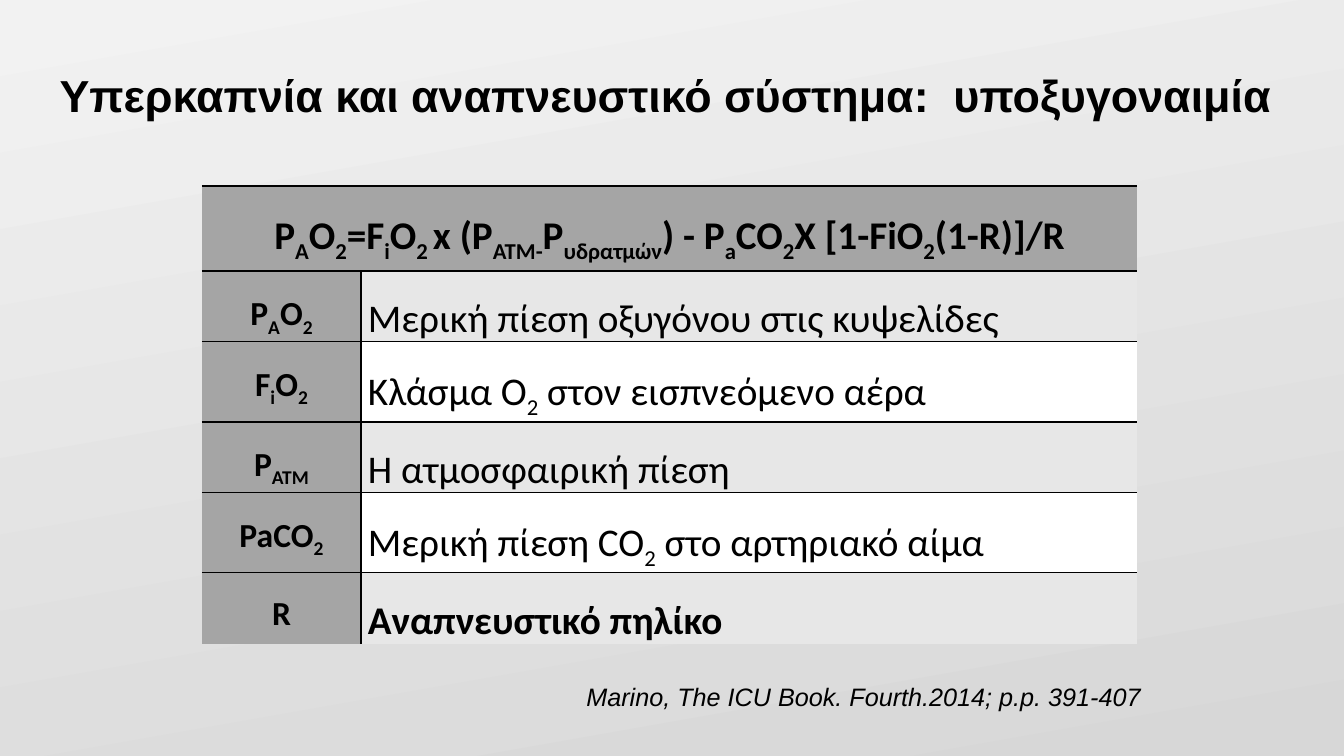
import pptx
import pptx.dml.color
import pptx.enum.text
import pptx.oxml
import pptx.oxml.ns
import pptx.util

ALIGN = pptx.enum.text.PP_ALIGN
ANCHOR = pptx.enum.text.MSO_ANCHOR

# Text inside braces is set as subscript.
TITLE = "Υπερκαπνία και αναπνευστικό σύστημα:  υποξυγοναιμία"
EQUATION = "P{A}O{2}=F{i}O{2 }x (P{ATM-}P{υδρατμών}) - P{a}CO{2}X [1-FiO{2}(1-R)]/R"
TERMS = [
    ("P{A}O{2}", "Μερική πίεση οξυγόνου στις κυψελίδες"),
    ("F{i}O{2}", "Κλάσμα Ο{2} στον εισπνεόμενο αέρα"),
    ("P{ATM}", "Η ατμοσφαιρική πίεση"),
    ("PaCO{2}", "Μερική πίεση CO{2} στο αρτηριακό αίμα"),
    ("R", "Αναπνευστικό πηλίκο"),
]
SOURCE = "Marino, The ICU Book. Fourth.2014; p.p. 391-407"

BLACK, GREY = "000000", "A5A5A5"
BANDS = ["E7E7E7", "FFFFFF"]
BACKDROP = ["F2F2F2", "D7D7D7"]
TABLE_LEFT, TABLE_TOP = 202, 186
COLUMNS = [159, 776]
HEADER_HEIGHT, ROW_HEIGHT = 85, 69
CELL_INSET = 7


def px(length):
    return pptx.util.Emu(round(length * 914400 / 100.8))


def color(value):
    return pptx.dml.color.RGBColor.from_string(value)


def write(frame, text, size, font="Calibri", bold=False, italic=False,
          align=ALIGN.CENTER, spacing=None):
    para = frame.paragraphs[0]
    para.alignment = align
    if spacing:
        para.line_spacing = spacing
    for index, part in enumerate(text.replace("}", "{").split("{")):
        if not part:
            continue
        span = para.add_run()
        span.text = part
        span.font.size = pptx.util.Pt(size)
        span.font.name = font
        span.font.bold = bold
        span.font.italic = italic
        span.font.color.rgb = color(BLACK)
        if index % 2:
            span.font._element.set("baseline", "-25000")


def add_text(page, text, left, top, width, height, anchor=ANCHOR.TOP, **format):
    box = page.shapes.add_textbox(px(left), px(top), px(width), px(height))
    box.text_frame.word_wrap = True
    box.text_frame.vertical_anchor = anchor
    write(box.text_frame, text, font="Arial", **format)


def set_borders(cell, **widths):
    """Draw the sides named L, R, T, B in points and clear the others."""
    properties = cell._tc.get_or_add_tcPr()
    for index, side in enumerate("LRTB"):
        width = widths.get(side, 0)
        paint = (f'<a:solidFill><a:srgbClr val="{BLACK}"/></a:solidFill>'
                 if width else "<a:noFill/>")
        line = pptx.oxml.parse_xml(
            f'<a:ln{side} {pptx.oxml.ns.nsdecls("a")} w="{width * 12700}">'
            f"{paint}</a:ln{side}>")
        properties.insert(index, line)


def fill_cell(cell, text, fill, borders, **format):
    cell.margin_left = cell.margin_right = px(CELL_INSET)
    cell.margin_top = cell.margin_bottom = 0
    cell.fill.solid()
    cell.fill.fore_color.rgb = color(fill)
    set_borders(cell, **borders)
    write(cell.text_frame, text, spacing=1.5, **format)


def add_terms_table(page):
    height = HEADER_HEIGHT + ROW_HEIGHT * len(TERMS)
    table = page.shapes.add_table(
        len(TERMS) + 1, len(COLUMNS), px(TABLE_LEFT), px(TABLE_TOP),
        px(sum(COLUMNS)), px(height)).table
    table.first_row = table.horz_banding = False
    for column, width in zip(table.columns, COLUMNS):
        column.width = px(width)
    for index, row in enumerate(table.rows):
        row.height = px(ROW_HEIGHT if index else HEADER_HEIGHT)

    table.cell(0, 0).merge(table.cell(0, 1))
    header_borders = {"T": 2, "B": 1}
    fill_cell(table.cell(0, 0), EQUATION, GREY, header_borders, size=28, bold=True)
    fill_cell(table.cell(0, 1), "", GREY, header_borders, size=28)

    for index, (symbol, meaning) in enumerate(TERMS, start=1):
        last = index == len(TERMS)
        below = {} if last else {"B": 1}
        above = {"T": 1} if index > 1 else {}
        fill_cell(table.cell(index, 0), symbol, GREY, {"T": 1, "R": 1, **below},
                  size=24, bold=True)
        fill_cell(table.cell(index, 1), meaning, BANDS[(index - 1) % 2],
                  {"L": 1, **above, **below},
                  size=28, bold=last, align=ALIGN.JUSTIFY)


def main():
    deck = pptx.Presentation()
    deck.slide_width, deck.slide_height = px(1344), px(756)
    page = deck.slides.add_slide(deck.slide_layouts[6])

    backdrop = page.background.fill
    backdrop.gradient()
    backdrop.gradient_angle = 280
    for position, (stop, value) in enumerate(zip(backdrop.gradient_stops, BACKDROP)):
        stop.position = position
        stop.color.rgb = color(value)

    add_text(page, TITLE, 40, 25, 1252, 146, anchor=ANCHOR.MIDDLE,
             size=32, bold=True, spacing=0.9)
    add_terms_table(page)
    add_text(page, SOURCE, 479, 676, 672, 40,
             size=18, italic=True, align=ALIGN.RIGHT)
    deck.save("out.pptx")


if __name__ == "__main__":
    main()
